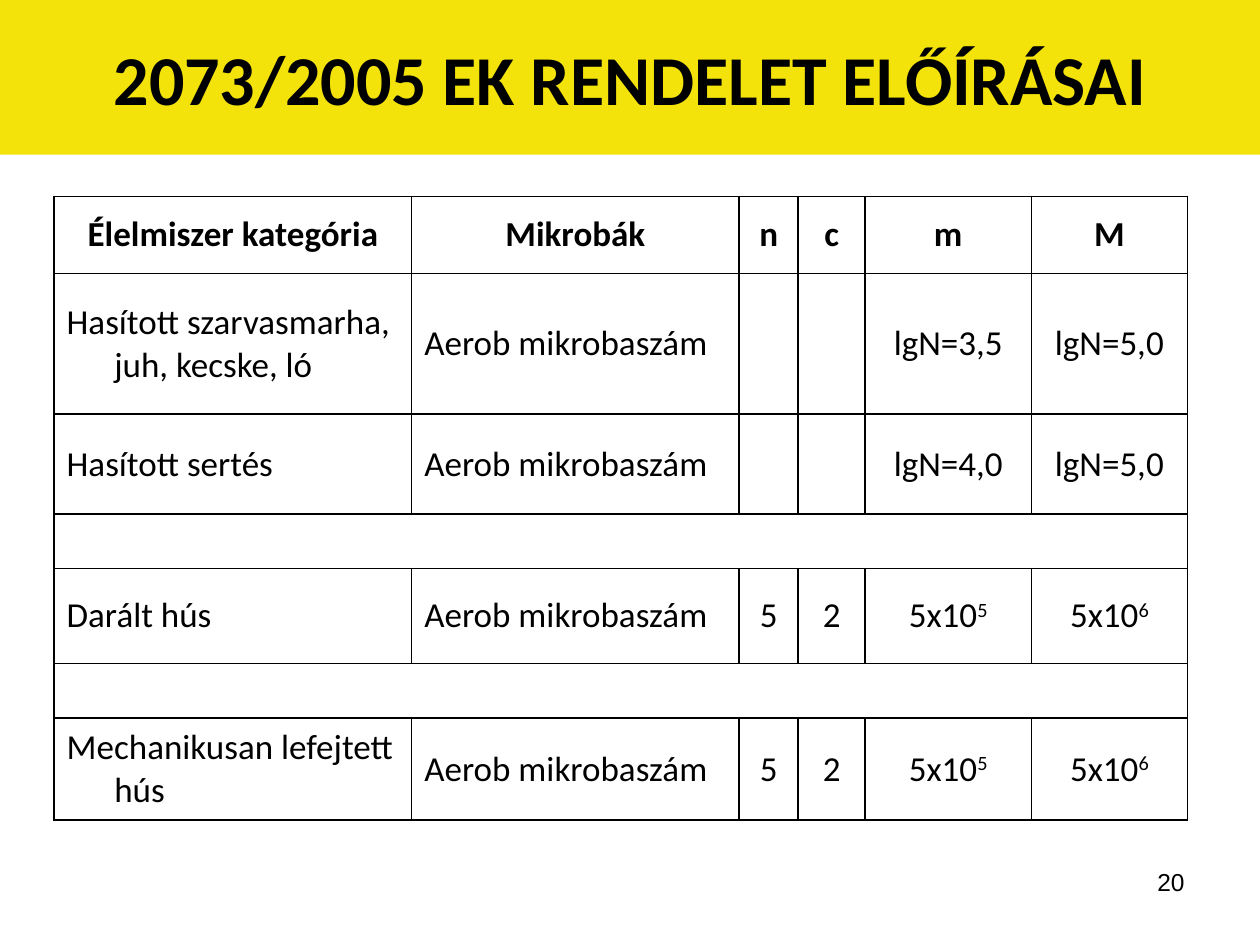
from dataclasses import dataclass

from lxml.etree import SubElement
from pptx import Presentation
from pptx.dml.color import RGBColor
from pptx.enum.text import MSO_ANCHOR, MSO_AUTO_SIZE, PP_ALIGN
from pptx.oxml.ns import qn
from pptx.util import Cm, Pt


@dataclass(frozen=True)
class Theme:
    ink: RGBColor = RGBColor(0, 0, 0)
    paper: RGBColor = RGBColor(255, 255, 255)
    band: RGBColor = RGBColor(0xF4, 0xE3, 0x0A)
    font: str = "Calibri"
    number_font: str = "Arial"
    title_size: Pt = Pt(40)
    table_size: Pt = Pt(20)
    number_size: Pt = Pt(14)
    border: Pt = Pt(1)


@dataclass(frozen=True)
class Row:
    height: float
    texts: tuple = ("",) * 6
    header: bool = False

    @property
    def spacer(self) -> bool:
        return not any(self.texts)


THEME = Theme()
MICROBE = "Aerob mikrobaszám"
LIMITS = (MICROBE, "5", "2", "5x10^5", "5x10^6")
COLUMN_WIDTHS = (7.21, 6.6, 1.19, 1.35, 3.35, 3.15)
ROWS = (
    Row(1.55, ("Élelmiszer kategória", "Mikrobák", "n", "c", "m", "M"), header=True),
    Row(2.84, ("Hasított szarvasmarha, juh, kecske, ló", MICROBE, "", "", "lgN=3,5", "lgN=5,0")),
    Row(2.01, ("Hasított sertés", MICROBE, "", "", "lgN=4,0", "lgN=5,0")),
    Row(0.99),
    Row(1.91, ("Darált hús", *LIMITS)),
    Row(0.97),
    Row(2.06, ("Mechanikusan lefejtett hús", *LIMITS)),
)


def apply(target, values: dict) -> None:
    for name, value in values.items():
        setattr(target, name, value)


def place(shape, left: float, top: float, width: float, height: float) -> None:
    apply(shape, {"left": Cm(left), "top": Cm(top), "width": Cm(width), "height": Cm(height)})


def add_span(para, text: str, size: Pt, font: str = THEME.font, bold: bool = False):
    span = para.add_run()
    span.text = text
    apply(span.font, {"name": font, "size": size, "bold": bold})
    span.font.color.rgb = THEME.ink
    return span


def set_borders(cell, sides: str) -> None:
    properties = cell._tc.get_or_add_tcPr()
    for side in "LRTB":
        line = SubElement(properties, qn(f"a:ln{side}"), w=str(THEME.border))
        if side in sides:
            fill = SubElement(line, qn("a:solidFill"))
            SubElement(fill, qn("a:srgbClr"), val=str(THEME.ink))
        else:
            SubElement(line, qn("a:noFill"))


def fill_cell(cell, text: str, centred: bool, bold: bool) -> None:
    cell.fill.solid()
    cell.fill.fore_color.rgb = THEME.paper
    cell.vertical_anchor = MSO_ANCHOR.MIDDLE
    para = cell.text_frame.paragraphs[0]
    para.alignment = PP_ALIGN.CENTER if centred else PP_ALIGN.LEFT
    if not text:
        SubElement(para._p, qn("a:endParaRPr"), sz=str(int(THEME.table_size.pt * 100)))
        return
    properties = para._p.get_or_add_pPr()
    properties.set("marL", str(Cm(0.96)))
    properties.set("indent", str(Cm(-0.96)))
    base, _, power = text.partition("^")
    add_span(para, base, THEME.table_size, bold=bold)
    if power:
        span = add_span(para, power, THEME.table_size, bold=bold)
        span.font._element.set("baseline", "30000")


def add_limits_table(page) -> None:
    frame = page.shapes.add_table(
        len(ROWS), len(COLUMN_WIDTHS), Cm(1.09), Cm(3.96),
        Cm(sum(COLUMN_WIDTHS)), Cm(sum(row.height for row in ROWS)))
    table = frame.table
    apply(table, {"first_row": False, "horz_banding": False})
    for column, width in zip(table.columns, COLUMN_WIDTHS):
        column.width = Cm(width)
    last = len(COLUMN_WIDTHS) - 1
    for row_index, row in enumerate(ROWS):
        table.rows[row_index].height = Cm(row.height)
        for column_index, text in enumerate(row.texts):
            cell = table.cell(row_index, column_index)
            sides = "LRTB"
            if row.spacer:
                sides = "TB" + "L" * (column_index == 0) + "R" * (column_index == last)
            set_borders(cell, sides)
            fill_cell(cell, text, row.header or column_index > 1, row.header)


def add_title(page, text: str) -> None:
    title = page.shapes.title
    place(title, 0, 0, 25.4, 3.12)
    title.fill.solid()
    title.fill.fore_color.rgb = THEME.band
    apply(title.text_frame, {"word_wrap": True, "auto_size": MSO_AUTO_SIZE.NONE,
                             "vertical_anchor": MSO_ANCHOR.MIDDLE})
    para = title.text_frame.paragraphs[0]
    para.alignment = PP_ALIGN.CENTER
    add_span(para, text, THEME.title_size, bold=True)


def add_page_number(page, text: str) -> None:
    box = page.shapes.add_textbox(Cm(18.21), Cm(17.35), Cm(5.92), Cm(1.32))
    box.text_frame.word_wrap = True
    para = box.text_frame.paragraphs[0]
    para.alignment = PP_ALIGN.RIGHT
    add_span(para, text, THEME.number_size, THEME.number_font)


def main() -> None:
    deck = Presentation()
    apply(deck, {"slide_width": Cm(25.4), "slide_height": Cm(19.05)})
    page = deck.slides.add_slide(deck.slide_layouts[5])
    add_page_number(page, "20")
    add_title(page, "2073/2005 EK RENDELET ELŐÍRÁSAI")
    add_limits_table(page)
    deck.save("out.pptx")


if __name__ == "__main__":
    main()
